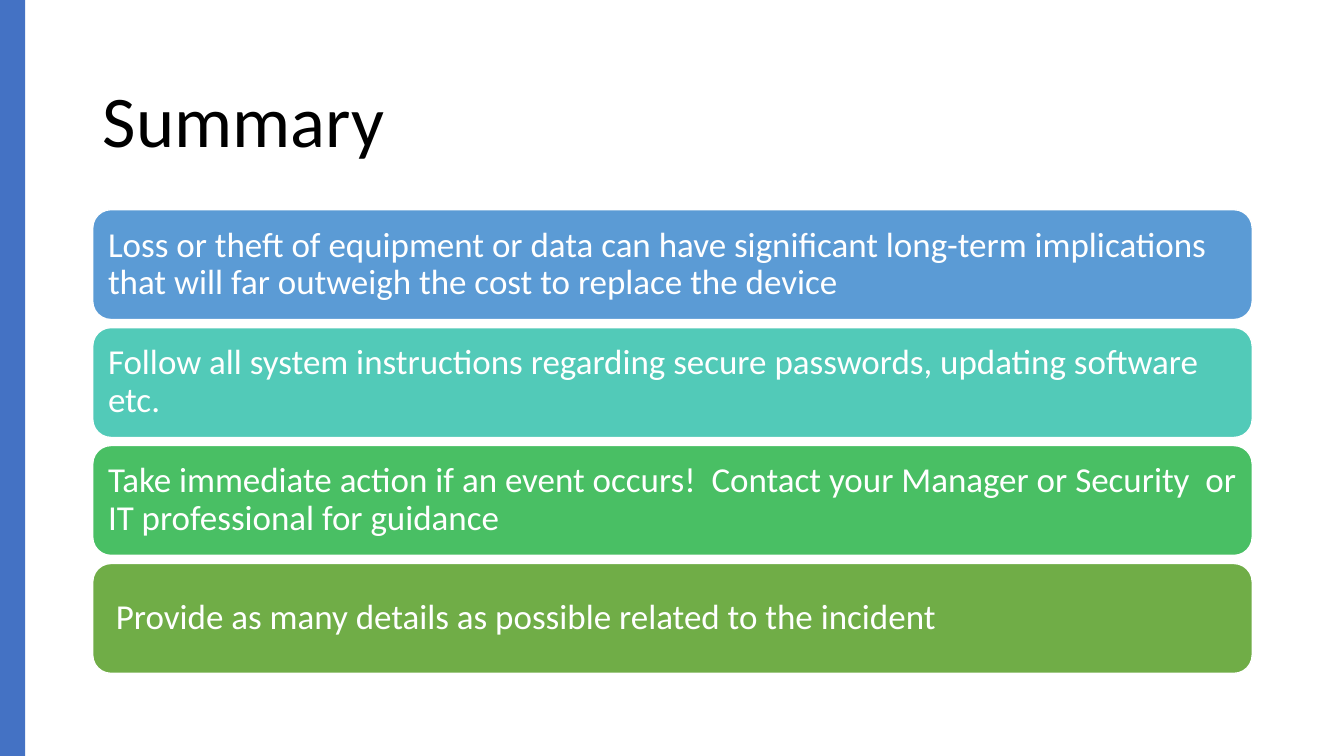
from pptx import Presentation
from pptx.dml.color import RGBColor
from pptx.enum.shapes import MSO_SHAPE as Shape
from pptx.enum.text import MSO_ANCHOR as Anchor, PP_ALIGN as Align
from pptx.util import Inches, Pt

BLACK = RGBColor(0x00, 0x00, 0x00)
WHITE = RGBColor(0xFF, 0xFF, 0xFF)
BAR_BLUE = RGBColor(0x44, 0x72, 0xC4)
BLUE = RGBColor(0x5B, 0x9B, 0xD5)
TEAL = RGBColor(0x52, 0xCA, 0xB8)
GREEN = RGBColor(0x49, 0xBF, 0x64)
OLIVE = RGBColor(0x70, 0xAD, 0x47)

FONT = "Calibri"
SLIDE_W, SLIDE_H = 13.33, 7.5
LEFT, WIDTH = 0.92, 11.5
FIRST_ROW, ROW_H, ROW_STEP = 2.08, 1.09, 1.17

POINTS = [
    (BLUE, "Loss or theft of equipment or data can have significant long-term "
           "implications that will far outweigh the cost to replace the device"),
    (TEAL, "Follow all system instructions regarding secure passwords, "
           "updating software etc."),
    (GREEN, "Take immediate action if an event occurs!  Contact your Manager "
            "or Security  or IT professional for guidance"),
    (OLIVE, " Provide as many details as possible related to the incident"),
]


def add_block(s, kind, left, top, width, height, fill):
    sp = s.shapes.add_shape(kind, Inches(left), Inches(top),
                            Inches(width), Inches(height))
    sp.shadow.inherit = False
    sp.fill.solid()
    sp.fill.fore_color.rgb = fill
    sp.line.fill.background()
    return sp


def write(sp, text, size, color):
    tf = sp.text_frame
    tf.word_wrap = True
    tf.vertical_anchor = Anchor.MIDDLE
    p = tf.paragraphs[0]
    p.alignment = Align.LEFT
    p.line_spacing = 0.9
    r = p.add_run()
    r.text = text
    r.font.name = FONT
    r.font.size = Pt(size)
    r.font.color.rgb = color


def add_title(s, text):
    sp = s.shapes.title
    sp.left, sp.top = Inches(LEFT), Inches(0.61)
    sp.width, sp.height = Inches(WIDTH), Inches(1.24)
    write(sp, text, 52, BLACK)


def add_point(s, row, fill, text):
    sp = add_block(s, Shape.ROUNDED_RECTANGLE, LEFT, FIRST_ROW + row * ROW_STEP,
                   WIDTH, ROW_H, fill)
    sp.line.color.rgb = WHITE
    sp.line.width = Pt(1)
    tf = sp.text_frame
    tf.margin_left = tf.margin_right = Inches(0.1)
    tf.margin_top = tf.margin_bottom = Inches(0.1)
    write(sp, text, 25, WHITE)


def main():
    prs = Presentation()
    prs.slide_width, prs.slide_height = Inches(SLIDE_W), Inches(SLIDE_H)
    s = prs.slides.add_slide(prs.slide_layouts[5])

    # Side bar and title
    add_block(s, Shape.RECTANGLE, 0, 0, 0.25, SLIDE_H, BAR_BLUE)
    add_title(s, "Summary")

    # Summary points, one per row
    for row, (fill, text) in enumerate(POINTS):
        add_point(s, row, fill, text)

    prs.save("out.pptx")


if __name__ == "__main__":
    main()
